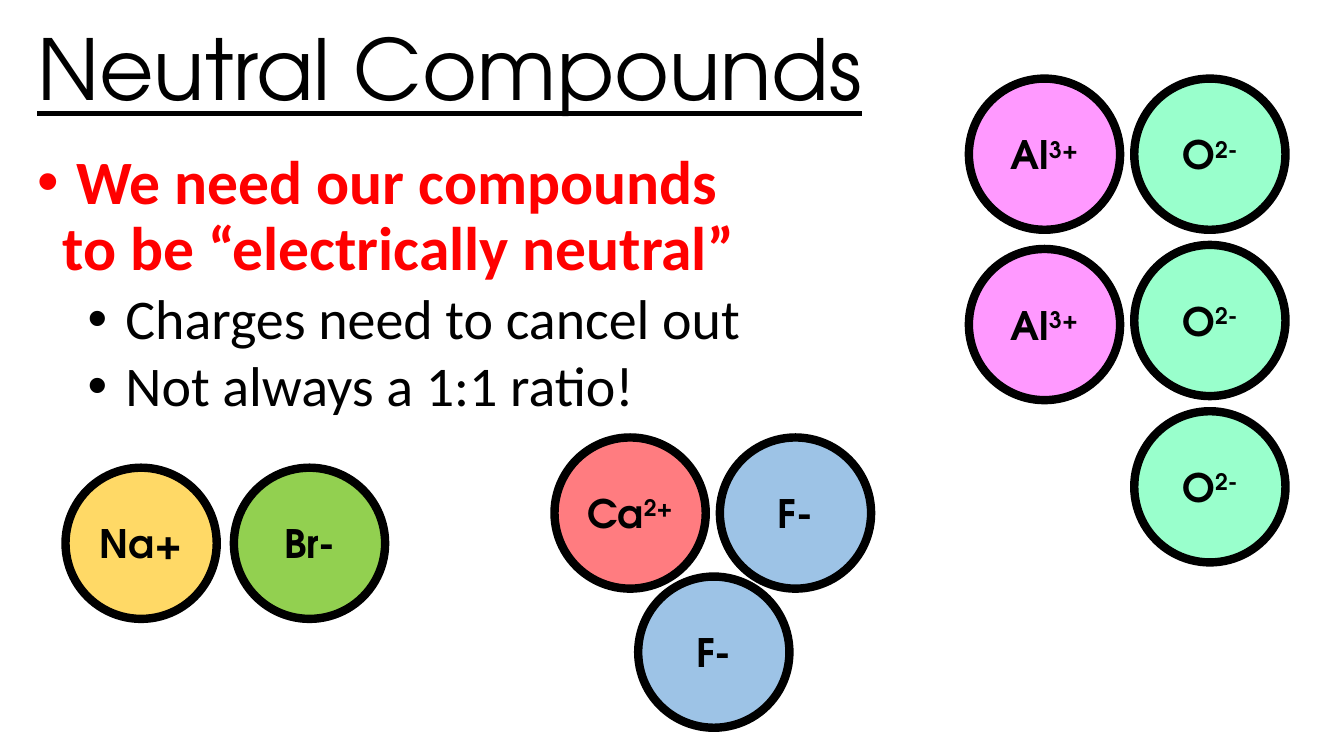
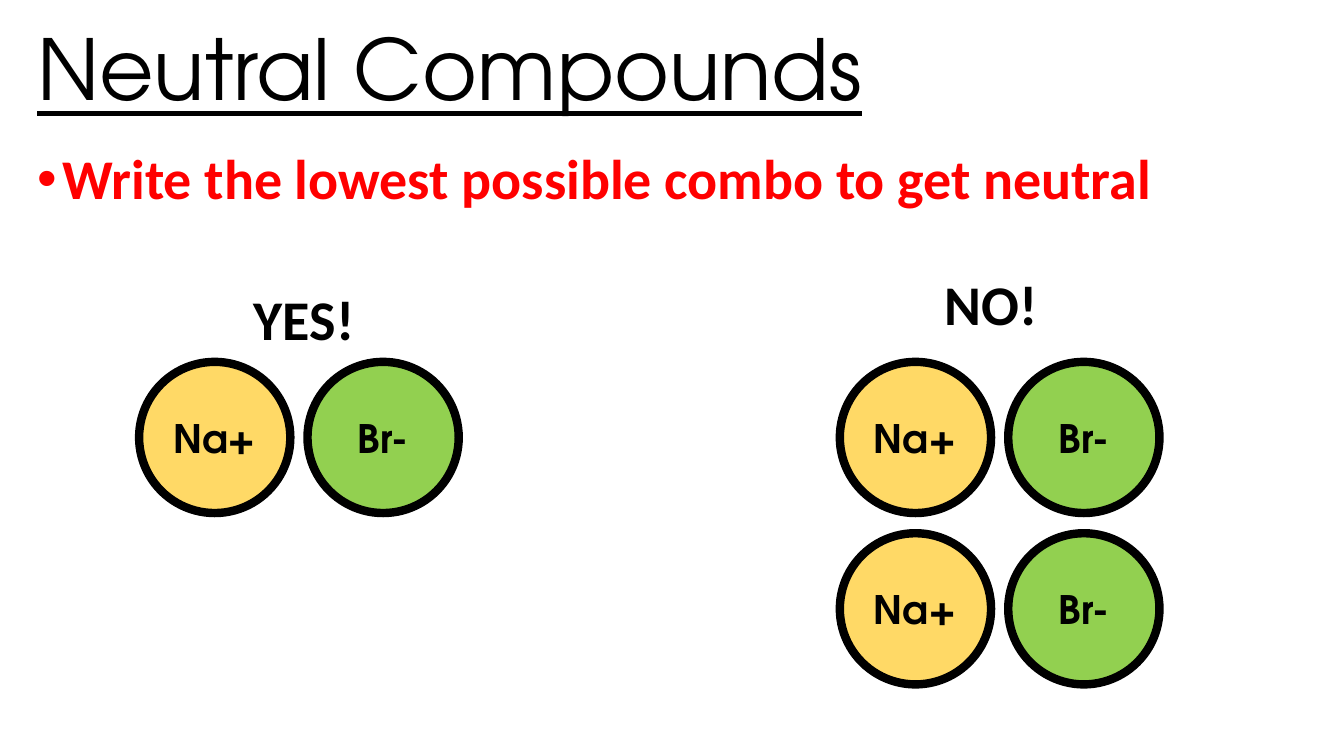
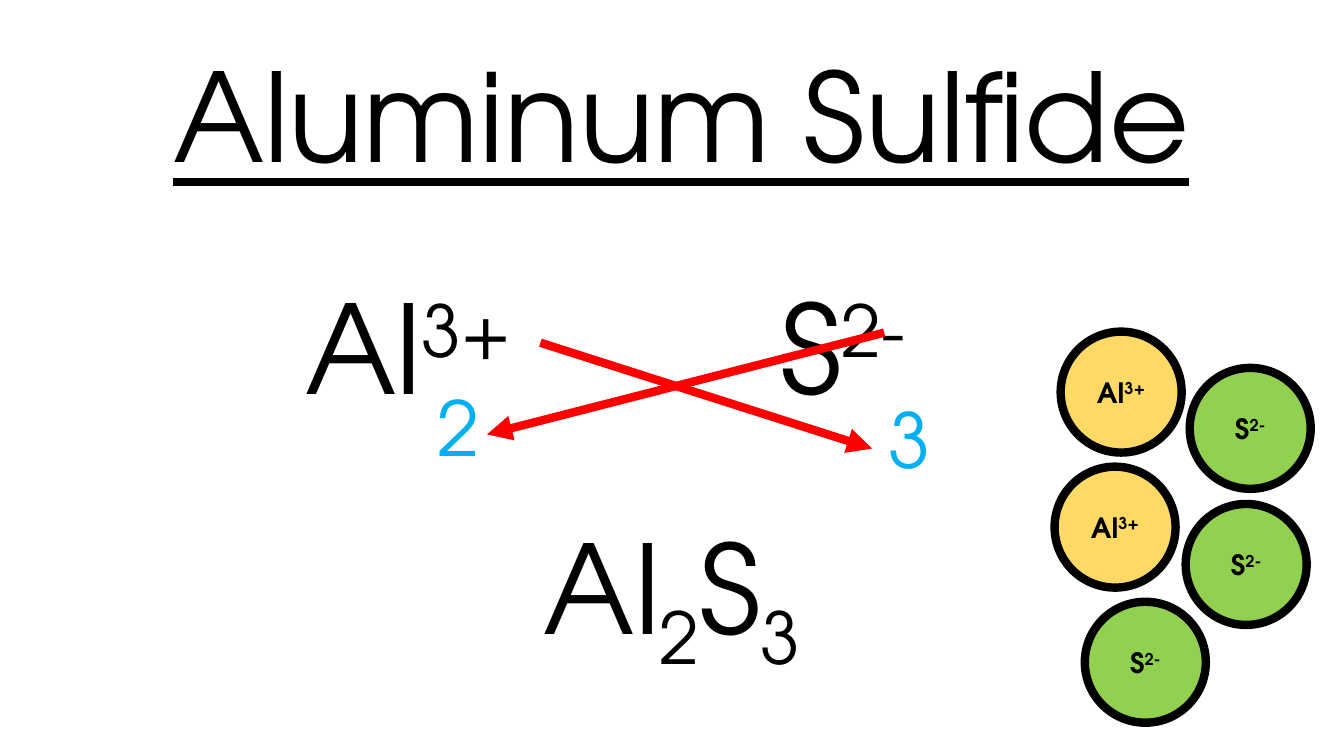
from lxml.etree import SubElement
from pptx import Presentation
from pptx.dml.color import RGBColor
from pptx.enum.shapes import MSO_CONNECTOR as Link, MSO_SHAPE as Shape
from pptx.enum.text import MSO_ANCHOR as Anchor, PP_ALIGN as Align
from pptx.oxml.ns import qn
from pptx.util import Inches, Pt

WIDE, HIGH = 13.33, 7.5
HEAD, BODY = "TeX Gyre Adventor", "Calibri"
BLACK, RED, BLUE = "000000", "FF0000", "00B0F0"
GOLD, GREEN, CORAL = "FFD966", "92D050", "FF7C80"
SKY, PINK, MINT = "9DC3E6", "FF99FF", "99FFCC"
SHIFT = {"^": "30000", "_": "-25000"}
PAIR = [("Na+", GOLD, 0, 0), ("Br-", GREEN, 1.67, 0)]


def color(code):
    return RGBColor.from_string(code)


def style(run, size, face=HEAD, tint=BLACK, bold=False, under=False):
    font = run.font
    font.size, font.name, font.bold = Pt(size), face, bold
    font.underline = under
    font.color.rgb = color(tint)


def formula(para, text, size, **look):
    """Write runs parted by |, where ^ raises a run and _ lowers it."""
    para.alignment = Align.CENTER
    for part in text.split("|"):
        run = para.add_run()
        run.text = part.lstrip("^_")
        style(run, size, **look)
        if part[0] in SHIFT:
            run.font._element.set("baseline", SHIFT[part[0]])


def frame(slide, left, top, width, height, wrap=True):
    box = slide.shapes.add_textbox(*map(Inches, (left, top, width, height)))
    box.text_frame.word_wrap = wrap
    return box.text_frame


def label(slide, box, text, size, **look):
    formula(frame(slide, *box).paragraphs[0], text, size, **look)


def title(slide, text):
    area = frame(slide, 0.27, 0, 11.23, 1.45)
    area.vertical_anchor = Anchor.MIDDLE
    area.text = text
    para = area.paragraphs[0]
    para.line_spacing = 0.9
    style(para.runs[0], 60, under=True)


def bullet(para, left, level=0):
    props = para._p.get_or_add_pPr()
    props.set("marL", str(Inches(left)))
    props.set("indent", str(Inches(-0.25)))
    SubElement(props, qn("a:buFont")).set("typeface", "Arial")
    SubElement(props, qn("a:buChar")).set("char", "•")
    para.level = level
    para.line_spacing = 0.9


def points(slide, main, subs=(), size=40):
    """Fill the body with one red main point and its black sub-points."""
    area = frame(slide, 0.27, 1.45, 11.72, 5.31)
    area.text = main
    para = area.paragraphs[0]
    bullet(para, 0.25)
    for run in para.runs:
        style(run, size, BODY, RED, bold=True)
    for text in subs:
        para = area.add_paragraph()
        para.text = text
        bullet(para, 0.75, 1)
        para.space_before = Pt(5)
        style(para.runs[0], 40, BODY)


def ion(slide, left, top, size, text, tint, points):
    ball = slide.shapes.add_shape(
        Shape.OVAL, *map(Inches, (left, top, size, size)))
    ball.shadow.inherit = False
    ball.fill.solid()
    ball.fill.fore_color.rgb = color(tint)
    ball.line.color.rgb = color(BLACK)
    ball.line.width = Pt(6)
    ball.text_frame.vertical_anchor = Anchor.MIDDLE
    formula(ball.text_frame.paragraphs[0], text, points, bold=True)


def cluster(slide, left, top, ions, size=1.5, points=28):
    """Place ions, given as text, tint and offset from the corner."""
    for text, tint, right, down in ions:
        ion(slide, left + right, top + down, size, text, tint, points)


def verdict(slide, left, top, width, text):
    area = frame(slide, left, top, width, 0.77, wrap=False)
    para = area.paragraphs[0]
    para._p.get_or_add_pPr().set("marL", str(Inches(0.5)))
    formula(para, text, 40, face=BODY, bold=True)


def arrow(slide, start, end):
    line = slide.shapes.add_connector(
        Link.STRAIGHT, *map(Inches, start + end))
    line.line.color.rgb = color(RED)
    line.line.width = Pt(6)
    SubElement(line.line._get_or_add_ln(), qn("a:tailEnd")).set(
        "type", "triangle")
    SubElement(line._element.spPr, qn("a:effectLst"))


def swap(slide, left, top):
    """Cross the two charges over to become subscripts."""
    label(slide, (left, top, 5.13, 1.58), "Al|^3+", 88)
    label(slide, (left + 4.8, top, 4.14, 1.58), "S|^2-", 88)
    arrow(slide, (left + 3.87, top + 0.76), (left + 7.16, top + 1.81))
    arrow(slide, (left + 7.28, top + 0.66), (left + 3.34, top + 1.67))
    label(slide, (left + 1.31, top + 1.09, 3.49, 1.01), "2", 54, tint=BLUE)
    label(slide, (left + 5.78, top + 1.21, 3.49, 1.01), "3", 54, tint=BLUE)


def neutral(slide):
    title(slide, "Neutral Compounds")
    points(slide, " We need our compounds \vto be “electrically neutral”",
           (" Charges need to cancel out", " Not always a 1:1 ratio!"), 44)
    cluster(slide, 0.65, 4.64, PAIR)
    cluster(slide, 5.5, 4.34, [("Ca|^2+", CORAL, 0, 0), ("F-", SKY, 1.64, 0),
                               ("F-", SKY, 0.83, 1.38)])
    cluster(slide, 9.61, 0.78,
            [("Al|^3+", PINK, 0, 1.69 * row) for row in range(2)]
            + [("O|^2-", MINT, 1.64, 1.65 * row) for row in range(3)])


def lowest(slide):
    title(slide, "Neutral Compounds")
    points(slide, "Write the lowest possible combo to get neutral")
    for left, top in ((1.38, 3.59), (8.33, 3.59), (8.33, 5.29)):
        cluster(slide, left, top, PAIR)
    verdict(slide, 1.91, 2.77, 1.71, "YES!")
    verdict(slide, 8.76, 2.62, 1.64, "NO!")


def sulfide(slide):
    label(slide, (0.09, 0.34, WIDE, 1.58), "Aluminum Sulfide", 88, under=True)
    swap(slide, 1.49, 2.64)
    label(slide, (0, 5.02, WIDE, 1.58), "Al|_2|S|_3", 88)
    metal, other = ("Al|^3+", GOLD), ("S|^2-", GREEN)
    cluster(slide, 10.46, 3.29,
            [(*metal, 0.06, 0), (*metal, 0, 1.34), (*other, 1.34, 0.36),
             (*other, 1.3, 1.71), (*other, 0.3, 2.68)], 1.2, 20)


def main():
    deck = Presentation()
    deck.slide_width, deck.slide_height = Inches(WIDE), Inches(HIGH)
    for build in (neutral, lowest, sulfide):
        build(deck.slides.add_slide(deck.slide_layouts[6]))
    deck.save("out.pptx")


if __name__ == "__main__":
    main()
